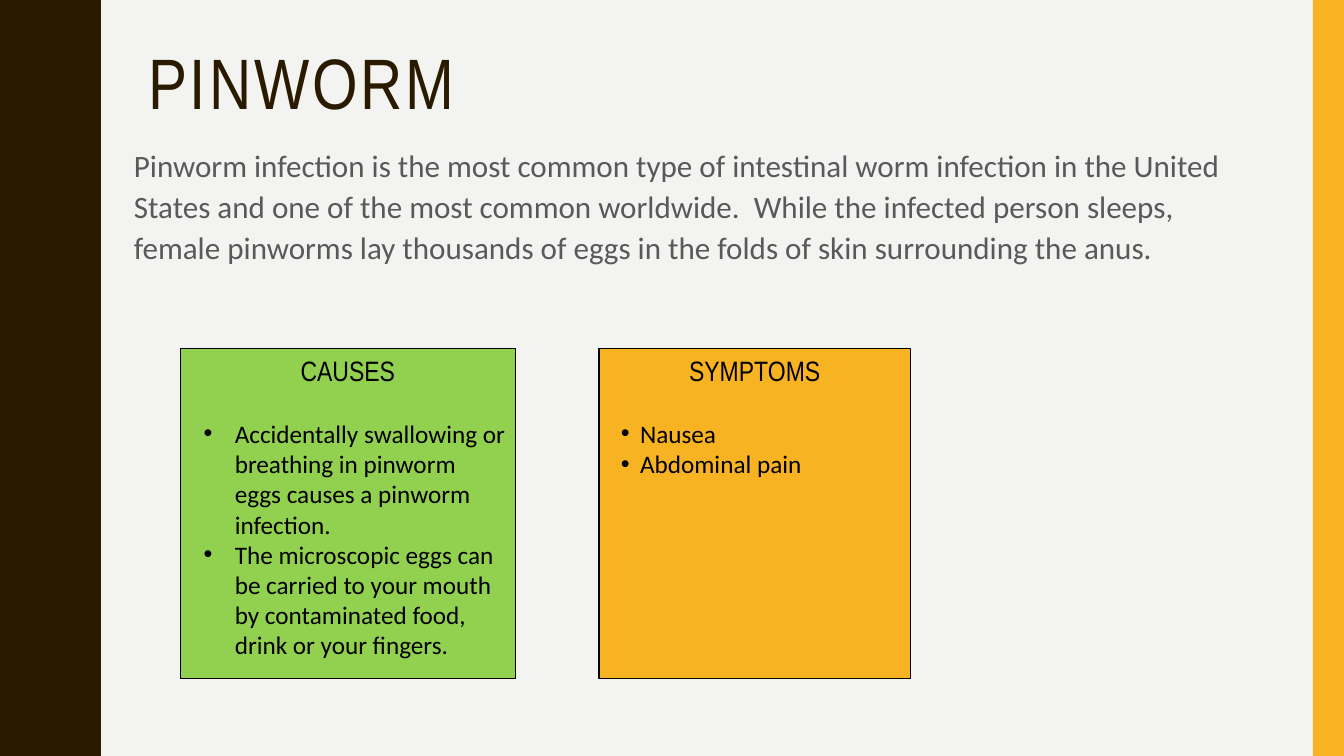
from dataclasses import dataclass

from pptx import Presentation
from pptx.dml.color import RGBColor
from pptx.enum.shapes import MSO_SHAPE
from pptx.enum.text import MSO_ANCHOR, MSO_AUTO_SIZE, PP_ALIGN
from pptx.oxml.ns import qn
from pptx.slide import Slide
from pptx.text.text import TextFrame
from pptx.util import Inches, Pt
from lxml.etree import SubElement


@dataclass(frozen=True)
class Theme:
    background: RGBColor = RGBColor(0xF3, 0xF3, 0xF2)
    brown: RGBColor = RGBColor(0x2A, 0x1A, 0x00)
    amber: RGBColor = RGBColor(0xF8, 0xB3, 0x23)
    green: RGBColor = RGBColor(0x92, 0xD0, 0x50)
    gray: RGBColor = RGBColor(0x59, 0x59, 0x59)
    black: RGBColor = RGBColor(0, 0, 0)
    heading_font: str = "Arial Narrow"
    body_font: str = "Calibri"
    title_size: float = 51
    intro_size: float = 22.2
    heading_size: float = 20
    bullet_size: float = 18


@dataclass(frozen=True)
class Card:
    heading: str
    bullets: tuple[str, ...]
    left: float
    width: float
    fill: RGBColor
    indent: float
    hanging: float


THEME = Theme()
WIDTH, HEIGHT = 13.33, 7.5
CARD_TOP, CARD_HEIGHT = 3.46, 3.27

CARDS = (
    Card("CAUSES",
         ("Accidentally swallowing or breathing in pinworm eggs causes a pinworm infection.",
          "The microscopic eggs can be carried to your mouth by contaminated food, "
          "drink or your fingers."),
         1.79, 3.32, THEME.green, 0.44, 0.31),
    Card("SYMPTOMS", ("Nausea", "Abdominal pain"),
         5.94, 3.09, THEME.amber, 0.31, 0.19),
)
INTRO = ("Pinworm infection is the most common type of intestinal worm infection in the "
         "United States and one of the most common worldwide.  While the infected person "
         "sleeps, female pinworms lay thousands of eggs in the folds of skin surrounding "
         "the anus.")

# Wave edge from trough to crest; the way back mirrors it
HALF_WAVE = ((0.78, 0), (0.78, 0.07), (0.79, 0.14), (0.8, 0.2), (0.81, 0.25), (0.83, 0.29),
             (0.85, 0.33), (0.87, 0.38), (0.89, 0.42), (0.91, 0.46), (0.93, 0.5),
             (0.95, 0.55), (0.96, 0.61), (0.97, 0.68), (0.97, 0.75))
WAVE_LENGTH, WAVE_COUNT = 1.5, 5


def style_text(paragraph, font: str, size: float, color: RGBColor) -> None:
    paragraph.font.name = font
    paragraph.font.size = Pt(size)
    paragraph.font.color.rgb = color


def prepare_frame(frame: TextFrame) -> None:
    frame.word_wrap = True
    frame.auto_size = MSO_AUTO_SIZE.NONE
    frame.vertical_anchor = MSO_ANCHOR.TOP


def add_bullet(paragraph, indent: float, hanging: float) -> None:
    properties = paragraph._p.get_or_add_pPr()
    properties.set("marL", str(Inches(indent)))
    properties.set("indent", str(-Inches(hanging)))
    SubElement(properties, qn("a:buFont"), typeface="Arial")
    SubElement(properties, qn("a:buChar"), char="•")


def draw_wave(slide: Slide) -> None:
    wave = HALF_WAVE + tuple((x, WAVE_LENGTH - y) for x, y in HALF_WAVE[-2::-1])
    edge = [(x, y + n * WAVE_LENGTH) for n in range(WAVE_COUNT) for x, y in wave]
    builder = slide.shapes.build_freeform(0, 0, scale=Inches(1))
    builder.add_line_segments([*edge, (0, HEIGHT)], close=True)
    border = builder.convert_to_shape()
    border.shadow.inherit = False
    border.fill.solid()
    border.fill.fore_color.rgb = THEME.brown
    border.line.fill.background()


def add_box(slide: Slide, left: float, top: float, width: float, height: float,
            fill: RGBColor):
    box = slide.shapes.add_shape(MSO_SHAPE.RECTANGLE, Inches(left), Inches(top),
                                 Inches(width), Inches(height))
    box.shadow.inherit = False
    box.fill.solid()
    box.fill.fore_color.rgb = fill
    box.line.fill.background()
    return box


def draw_title(slide: Slide) -> None:
    title = slide.shapes.title
    title.left, title.top = Inches(1.37), Inches(0.42)
    title.width, title.height = Inches(11.13), Inches(0.96)
    prepare_frame(title.text_frame)
    title.text_frame.text = "PINWORM"
    heading = title.text_frame.paragraphs[0]
    heading.alignment = PP_ALIGN.LEFT
    heading.line_spacing = 0.9
    style_text(heading, THEME.heading_font, THEME.title_size, THEME.brown)
    heading.runs[0].font._element.set("spc", "200")


def draw_intro(slide: Slide) -> None:
    intro = slide.shapes.add_textbox(Inches(1.23), Inches(1.37), Inches(11.13), Inches(1.61))
    prepare_frame(intro.text_frame)
    intro.text_frame.text = INTRO
    paragraph = intro.text_frame.paragraphs[0]
    paragraph.line_spacing = 1.1
    style_text(paragraph, THEME.body_font, THEME.intro_size, THEME.gray)


def draw_card(slide: Slide, card: Card) -> None:
    box = add_box(slide, card.left, CARD_TOP, card.width, CARD_HEIGHT, card.fill)
    box.line.color.rgb = THEME.black
    box.line.width = Pt(1)
    frame = box.text_frame
    prepare_frame(frame)
    frame.text = card.heading
    heading = frame.paragraphs[0]
    heading.alignment = PP_ALIGN.CENTER
    heading.space_after = Pt(22)
    style_text(heading, THEME.heading_font, THEME.heading_size, THEME.black)
    for text in card.bullets:
        bullet = frame.add_paragraph()
        bullet.text = text
        bullet.alignment = PP_ALIGN.LEFT
        style_text(bullet, THEME.body_font, THEME.bullet_size, THEME.black)
        add_bullet(bullet, card.indent, card.hanging)


def main() -> None:
    deck = Presentation()
    deck.slide_width, deck.slide_height = Inches(WIDTH), Inches(HEIGHT)
    slide = deck.slides.add_slide(deck.slide_layouts[5])

    # Backdrop
    slide.background.fill.solid()
    slide.background.fill.fore_color.rgb = THEME.background
    draw_wave(slide)
    add_box(slide, 13.02, 0, 0.31, HEIGHT, THEME.amber)

    # Content
    draw_title(slide)
    draw_intro(slide)
    for card in CARDS:
        draw_card(slide, card)

    deck.save("out.pptx")


if __name__ == "__main__":
    main()
